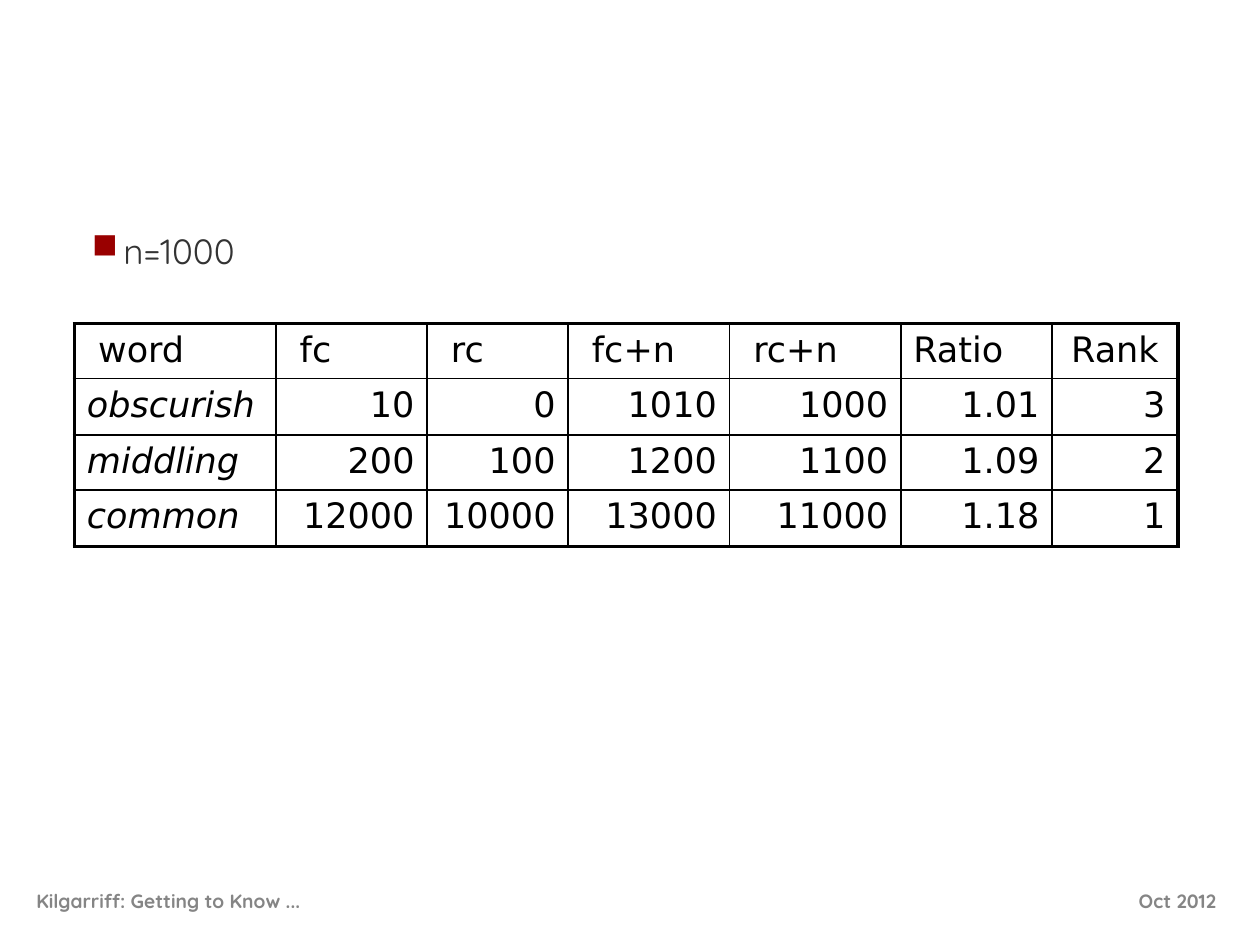
from dataclasses import dataclass

from lxml import etree
from pptx import Presentation
from pptx.dml.color import RGBColor
from pptx.enum.text import MSO_ANCHOR, PP_ALIGN
from pptx.oxml.ns import qn
from pptx.util import Pt

LEFT, CENTER, RIGHT = PP_ALIGN.LEFT, PP_ALIGN.CENTER, PP_ALIGN.RIGHT
MIDDLE = MSO_ANCHOR.MIDDLE

HEADING_FONT, TABLE_FONT = "Quicksand", "DejaVu Sans"
BLACK, DARK, GREY, RED = "000000", "333333", "858585", "990000"
THIN, THICK = 1, 2.25
INSET, HEADER_INSET = 7.2, 13.6

COL_WIDTHS = [115.2, 86.4, 80.6, 92.2, 97.9, 86.4, 72]
ROW_HEIGHTS = [31.2, 32.4, 31.2, 32.4]
ROWS = [
    ["word", "fc", "rc", "fc+n", "rc+n", "Ratio", "Rank"],
    ["obscurish", "10", "0", "1010", "1000", "1.01", "3"],
    ["middling", "200", "100", "1200", "1100", "1.09", "2"],
    ["common", "12000", "10000", "13000", "11000", "1.18", "1"],
]
INDENTED_HEADERS = 5


@dataclass
class Label:
    text: str
    left: float
    top: float
    width: float
    height: float
    size: float
    color: str
    bold: bool = False
    align: PP_ALIGN = LEFT


FOOTERS = [
    Label("Oct 2012", 566.6, 500.4, 135.5, 28.8, 11, GREY, True, RIGHT),
    Label("Kilgarriff: Getting to Know ...", 13.7, 500.4, 473, 28.8, 11, GREY, True),
]
PARAMETER = Label("n=1000", 45.4, 126.9, 561.6, 32.2, 20, DARK)


def rgb(color: str) -> RGBColor:
    return RGBColor.from_string(color)


def format_text(p, font: str, size: float, color: str, align: PP_ALIGN,
                bold: bool = False, italic: bool = False) -> None:
    p.alignment = align
    for r in p.runs:
        f = r.font
        f.name, f.size, f.bold, f.italic = font, Pt(size), bold, italic
        f.color.rgb = rgb(color)


def add_label(s, label: Label):
    """Add a text box and return its paragraph."""
    sp = s.shapes.add_textbox(Pt(label.left), Pt(label.top),
                              Pt(label.width), Pt(label.height))
    tf = sp.text_frame
    tf.word_wrap = True
    tf.vertical_anchor = MIDDLE
    tf.text = label.text
    p = tf.paragraphs[0]
    format_text(p, HEADING_FONT, label.size, label.color, label.align, label.bold)
    return p


def add_bullet(p, char: str, color: str, indent: float) -> None:
    pPr = p._p.get_or_add_pPr()
    pPr.set("marL", str(Pt(indent)))
    pPr.set("indent", str(-Pt(indent)))
    clr = etree.SubElement(pPr, qn("a:buClr"))
    etree.SubElement(clr, qn("a:srgbClr"), val=color)
    etree.SubElement(pPr, qn("a:buChar"), char=char)


def set_borders(cell, widths: dict[str, float]) -> None:
    tcPr = cell._tc.get_or_add_tcPr()
    for side, width in widths.items():
        ln = etree.SubElement(tcPr, qn(f"a:ln{side}"), w=str(Pt(width)))
        fill = etree.SubElement(ln, qn("a:solidFill"))
        etree.SubElement(fill, qn("a:srgbClr"), val=BLACK)


def cell_align(row: int, col: int) -> PP_ALIGN:
    if row and col:
        return RIGHT
    return CENTER if col == len(COL_WIDTHS) - 1 else LEFT


def add_word_table(s, left: float, top: float) -> None:
    last_row, last_col = len(ROWS) - 1, len(COL_WIDTHS) - 1
    table = s.shapes.add_table(len(ROWS), len(COL_WIDTHS), Pt(left), Pt(top),
                               Pt(sum(COL_WIDTHS)), Pt(sum(ROW_HEIGHTS))).table
    table.first_row = table.horz_banding = False
    for column, width in zip(table.columns, COL_WIDTHS):
        column.width = Pt(width)
    for row, height in zip(table.rows, ROW_HEIGHTS):
        row.height = Pt(height)

    for i, values in enumerate(ROWS):
        for j, value in enumerate(values):
            cell = table.cell(i, j)
            cell.text_frame.text = value
            indented = i == 0 and j < INDENTED_HEADERS
            cell.margin_left = Pt(HEADER_INSET if indented else INSET)
            format_text(cell.text_frame.paragraphs[0], TABLE_FONT, 20, BLACK,
                        cell_align(i, j), italic=i > 0 and j == 0)
            set_borders(cell, {
                "L": THICK if j == 0 else THIN,
                "R": THICK if j == last_col else THIN,
                "T": THICK if i == 0 else THIN,
                "B": THICK if i == last_row else THIN,
            })
            cell.fill.background()


def main() -> None:
    prs = Presentation()
    prs.slide_width, prs.slide_height = Pt(720), Pt(540)
    s = prs.slides.add_slide(prs.slide_layouts[6])
    for footer in FOOTERS:
        add_label(s, footer)
    add_bullet(add_label(s, PARAMETER), "■", RED, 18)
    add_word_table(s, 42.5, 185)
    prs.save("out.pptx")


if __name__ == "__main__":
    main()
